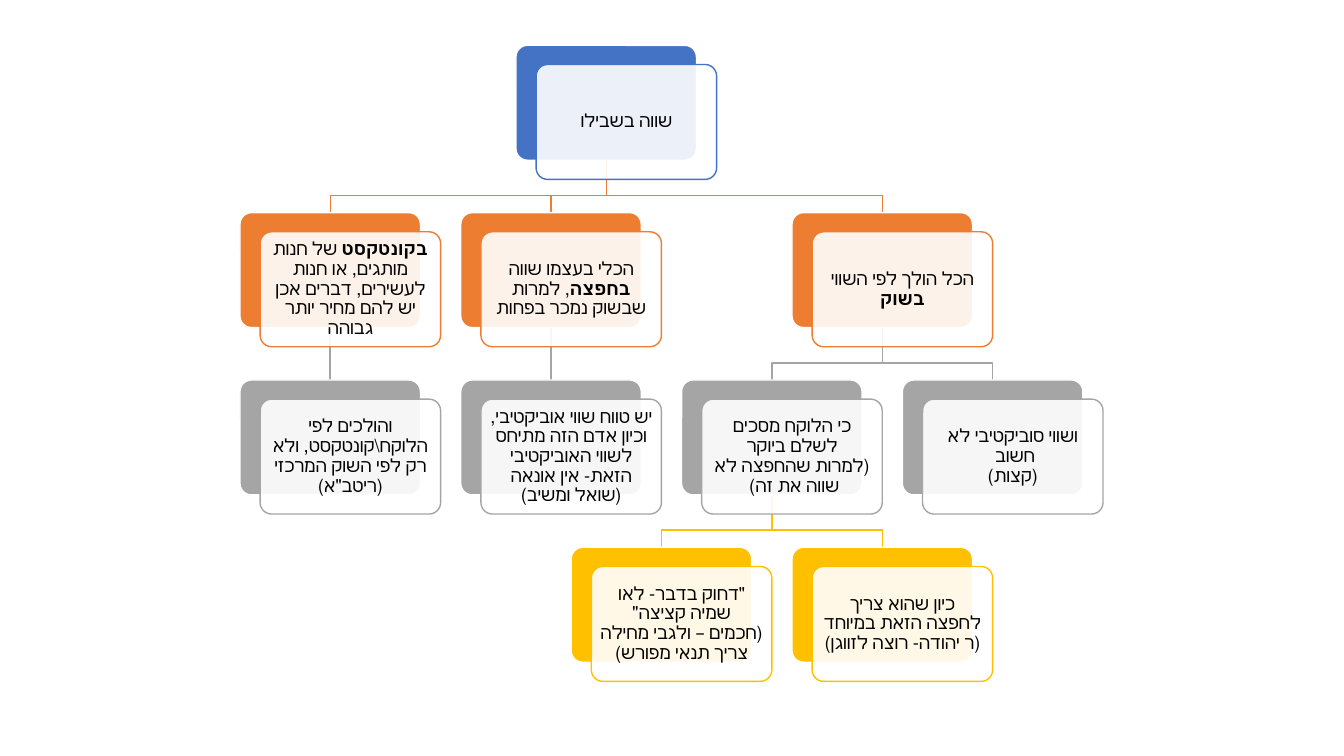
from lxml import etree
from pptx import Presentation
from pptx.dml.color import RGBColor
from pptx.enum.shapes import MSO_CONNECTOR, MSO_SHAPE
from pptx.enum.text import MSO_ANCHOR, PP_ALIGN
from pptx.oxml.ns import qn
from pptx.util import Inches, Pt

ROUNDED = MSO_SHAPE.ROUNDED_RECTANGLE
STRAIGHT = MSO_CONNECTOR.STRAIGHT
MIDDLE = MSO_ANCHOR.MIDDLE
CENTER = PP_ALIGN.CENTER

LEFT, TOP = 2.38, 0.45
COLUMN_STEP, ROW_STEP = 2.19, 1.66
CARD_WIDTH, CARD_HEIGHT = 1.79, 1.14
PANEL_RIGHT, PANEL_DOWN = 0.2, 0.19
FONT_SIZE = Pt(13)
LEVEL_COLORS = ["4472C4", "ED7D31", "A5A5A5", "FFC000"]

# name: (column, level, parent, text); words between asterisks are bold
CARDS = {
    "root": (1.25, 0, None, "שווה בשבילו"),
    "market": (2.5, 1, "root", "הכל הולך לפי השווי *בשוק*"),
    "subjective": (3, 2, "market", "ושווי סוביקטיבי לא חשוב \n(קצות)"),
    "agreed": (2, 2, "market", "כי הלוקח מסכים לשלם ביוקר\n(למרות שהחפצה לא שווה את זה) "),
    "needed": (2.5, 3, "agreed", "כיון שהוא צריך לחפצה הזאת במיוחד\n(ר יהודה- רוצה לזווגן)"),
    "pressed": (1.5, 3, "agreed",
                "\"דחוק בדבר- לאו שמיה קציצה\"\n(חכמים – ולגבי מחילה צריך תנאי מפורש)"),
    "object": (1, 1, "root", "הכלי בעצמו שווה *בחפצה*, למרות שבשוק נמכר בפחות"),
    "range": (1, 2, "object",
              "יש טווח שווי אוביקטיבי, וכיון אדם הזה מתיחס לשווי האוביקטיבי "
              "הזאת- אין אונאה\n(שואל ומשיב)"),
    "context": (0, 1, "root",
                "*בקונטקסט* של חנות מותגים, או חנות לעשירים, דברים אכן "
                "יש להם מחיר יותר גבוהה"),
    "buyer": (0, 2, "context",
              "והולכים לפי הלוקח\\קונטקסט, ולא רק לפי השוק המרכזי\n(ריטב\"א)"),
}


def rgb(color):
    return RGBColor.from_string(color)


def add_card(left, top, fill, line):
    shape = slide.shapes.add_shape(
        ROUNDED, Inches(left), Inches(top), Inches(CARD_WIDTH), Inches(CARD_HEIGHT))
    shape.shadow.inherit = False
    shape.adjustments[0] = 0.1
    shape.fill.solid()
    shape.fill.fore_color.rgb = rgb(fill)
    shape.line.color.rgb = rgb(line)
    shape.line.width = Pt(1)
    return shape


presentation = Presentation()
presentation.slide_width = Inches(13.33)
presentation.slide_height = Inches(7.5)
slide = presentation.slides.add_slide(presentation.slide_layouts[6])

# Lines from each parent to its children
for column, level, parent, text in CARDS.values():
    if parent is None:
        continue
    parent_column = CARDS[parent][0]
    start_x = Inches(LEFT + parent_column * COLUMN_STEP + CARD_WIDTH / 2)
    end_x = Inches(LEFT + column * COLUMN_STEP + CARD_WIDTH / 2)
    end_top = TOP + level * ROW_STEP
    start_y = Inches(end_top - ROW_STEP + CARD_HEIGHT)
    bend_y, end_y = Inches(end_top - 0.17), Inches(end_top)
    if column == parent_column:
        branch = slide.shapes.add_connector(STRAIGHT, start_x, start_y, end_x, end_y)
        etree.SubElement(branch._element.spPr, qn("a:effectLst"))
    else:
        builder = slide.shapes.build_freeform(start_x, start_y)
        builder.add_line_segments(
            [(start_x, bend_y), (end_x, bend_y), (end_x, end_y)], close=False)
        branch = builder.convert_to_shape()
        branch.shadow.inherit = False
        branch.fill.background()
    branch.line.color.rgb = rgb(LEVEL_COLORS[level])
    branch.line.width = Pt(1)

# Cards: a coloured back and a translucent panel with the text
for column, level, parent, text in CARDS.values():
    left = LEFT + column * COLUMN_STEP
    top = TOP + level * ROW_STEP
    color = LEVEL_COLORS[level]
    add_card(left, top, color, "FFFFFF")
    panel = add_card(left + PANEL_RIGHT, top + PANEL_DOWN, "FFFFFF", color)
    panel_color = panel._element.spPr.find(qn("a:solidFill")).find(qn("a:srgbClr"))
    etree.SubElement(panel_color, qn("a:alpha"), val="90000")

    frame = panel.text_frame
    frame.word_wrap = True
    frame.vertical_anchor = MIDDLE
    frame.margin_left = frame.margin_right = Inches(0.05)
    frame.margin_top = frame.margin_bottom = Inches(0.05)
    paragraph = frame.paragraphs[0]
    paragraph.alignment = CENTER
    paragraph.line_spacing = 0.9
    paragraph._p.get_or_add_pPr().set("rtl", "1")

    for line_number, line in enumerate(text.split("\n")):
        if line_number:
            paragraph.add_line_break()
            line_break = paragraph._p.findall(qn("a:br"))[-1]
            etree.SubElement(line_break, qn("a:rPr"), sz=str(FONT_SIZE.centipoints))
        for part_number, part in enumerate(line.split("*")):
            if not part:
                continue
            run = paragraph.add_run()
            run.text = part
            run.font.size = FONT_SIZE
            run.font.bold = part_number % 2 == 1
            run.font.color.rgb = rgb("000000")
            run.font.name = "Calibri"
            run._r.get_or_add_rPr().set("lang", "he-IL")

presentation.save("out.pptx")
